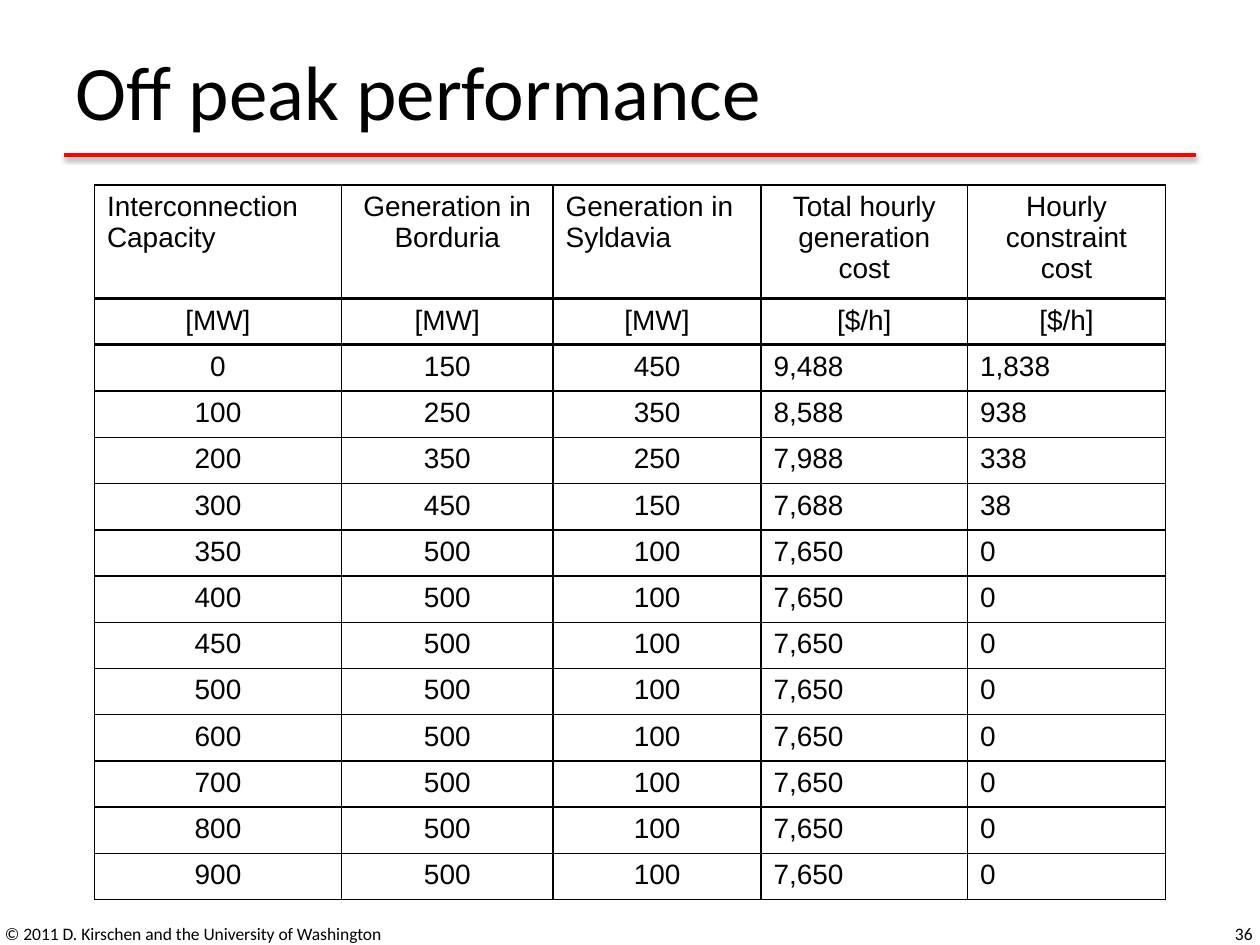
from dataclasses import dataclass

import pptx
import pptx.dml.color
import pptx.enum.shapes
import pptx.enum.text
import pptx.oxml
import pptx.oxml.ns
import pptx.slide
import pptx.table
import pptx.util
from pptx.util import Inches

ALIGN = pptx.enum.text.PP_ALIGN


@dataclass(frozen=True)
class Theme:
    ink: str = "000000"
    accent: str = "FF0000"
    heading_font: str = "Calibri"
    table_font: str = "Arial"
    title_size: float = 44
    footer_size: float = 10
    table_size: float = 16
    thin: float = 1
    thick: float = 2


@dataclass(frozen=True)
class Label:
    text: str
    left: float
    top: float
    width: float
    height: float
    size: float
    align: ALIGN = ALIGN.LEFT


@dataclass(frozen=True)
class Column:
    heading: str
    unit: str
    width: float
    heading_align: ALIGN
    value_align: ALIGN


THEME = Theme()

LABELS = [
    Label("Off peak performance", 0.5, 0.13, 9, 1.17, THEME.title_size),
    Label("© 2011 D. Kirschen and the University of Washington",
          -0.06, 7.21, 3.88, 0.4, THEME.footer_size),
    Label("36", 7.71, 7.21, 2.33, 0.4, THEME.footer_size, ALIGN.RIGHT),
]

COLUMNS = [
    Column("Interconnection Capacity", "[MW]", 1.96, ALIGN.LEFT, ALIGN.CENTER),
    Column("Generation in Borduria", "[MW]", 1.68, ALIGN.CENTER, ALIGN.CENTER),
    Column("Generation in Syldavia", "[MW]", 1.65, ALIGN.LEFT, ALIGN.CENTER),
    Column("Total hourly generation\ncost", "[$/h]", 1.64, ALIGN.CENTER, ALIGN.LEFT),
    Column("Hourly constraint cost", "[$/h]", 1.57, ALIGN.CENTER, ALIGN.LEFT),
]

CONSTRAINED = [
    (0, 150, 450, 9488, 1838),
    (100, 250, 350, 8588, 938),
    (200, 350, 250, 7988, 338),
    (300, 450, 150, 7688, 38),
]
UNCONSTRAINED = [
    (capacity, 500, 100, 7650, 0)
    for capacity in (350, 400, 450, 500, 600, 700, 800, 900)
]
RESULTS = CONSTRAINED + UNCONSTRAINED

HEADING_HEIGHT = 0.66
ROW_HEIGHT = 0.3
UNIT_ROW = 1


def style_paragraphs(frame: pptx.text.text.TextFrame, font_name: str,
                     size: float, align: ALIGN) -> None:
    for paragraph in frame.paragraphs:
        paragraph.alignment = align
        paragraph.font.name = font_name
        paragraph.font.size = pptx.util.Pt(size)
        paragraph.font.color.rgb = pptx.dml.color.RGBColor.from_string(THEME.ink)


def add_label(slide: pptx.slide.Slide, label: Label) -> None:
    box = slide.shapes.add_textbox(Inches(label.left), Inches(label.top),
                                   Inches(label.width), Inches(label.height))
    frame = box.text_frame
    frame.word_wrap = True
    frame.vertical_anchor = pptx.enum.text.MSO_ANCHOR.MIDDLE
    frame.text = label.text
    style_paragraphs(frame, THEME.heading_font, label.size, label.align)


def add_title_rule(slide: pptx.slide.Slide) -> None:
    rule = slide.shapes.add_connector(
        pptx.enum.shapes.MSO_CONNECTOR.STRAIGHT,
        Inches(0.51), Inches(1.23), Inches(9.49), Inches(1.23))
    rule.line.color.rgb = pptx.dml.color.RGBColor.from_string(THEME.accent)
    rule.line.width = pptx.util.Pt(THEME.thick)
    blur, distance = pptx.util.Pt(3.1), pptx.util.Pt(1.6)
    rule._element.spPr.append(pptx.oxml.parse_xml(
        f'<a:effectLst {pptx.oxml.ns.nsdecls("a")}>'
        f'<a:outerShdw blurRad="{blur}" dist="{distance}" dir="5400000" rotWithShape="0">'
        f'<a:srgbClr val="{THEME.ink}"><a:alpha val="38000"/></a:srgbClr>'
        '</a:outerShdw></a:effectLst>'))


def set_borders(cell: pptx.table._Cell, top: float, bottom: float) -> None:
    widths = {"lnL": THEME.thin, "lnR": THEME.thin, "lnT": top, "lnB": bottom}
    properties = cell._tc.get_or_add_tcPr()
    for side, width in widths.items():
        properties.append(pptx.oxml.parse_xml(
            f'<a:{side} {pptx.oxml.ns.nsdecls("a")} w="{pptx.util.Pt(width)}">'
            f'<a:solidFill><a:srgbClr val="{THEME.ink}"/></a:solidFill>'
            f'</a:{side}>'))


def fill_cell(cell: pptx.table._Cell, text: str, align: ALIGN, row: int) -> None:
    cell.text = text
    style_paragraphs(cell.text_frame, THEME.table_font, THEME.table_size, align)
    top = THEME.thick if row in (UNIT_ROW, UNIT_ROW + 1) else THEME.thin
    bottom = THEME.thick if row in (UNIT_ROW - 1, UNIT_ROW) else THEME.thin
    set_borders(cell, top, bottom)
    cell.fill.background()


def add_results_table(slide: pptx.slide.Slide) -> None:
    row_count = len(RESULTS) + 2
    height = HEADING_HEIGHT + ROW_HEIGHT * (row_count - 1)
    table = slide.shapes.add_table(
        row_count, len(COLUMNS), Inches(0.75), Inches(1.47),
        Inches(8.5), Inches(height)).table
    table.first_row = False
    table.horz_banding = False
    for row_index, row in enumerate(table.rows):
        row.height = Inches(ROW_HEIGHT if row_index else HEADING_HEIGHT)
    for index, column in enumerate(COLUMNS):
        table.columns[index].width = Inches(column.width)
        fill_cell(table.cell(0, index), column.heading, column.heading_align, 0)
        fill_cell(table.cell(UNIT_ROW, index), column.unit, ALIGN.CENTER, UNIT_ROW)
        for row, result in enumerate(RESULTS, start=UNIT_ROW + 1):
            fill_cell(table.cell(row, index), f"{result[index]:,}",
                      column.value_align, row)


def main() -> None:
    presentation = pptx.Presentation()
    presentation.slide_width = Inches(10)
    presentation.slide_height = Inches(7.5)
    slide = presentation.slides.add_slide(presentation.slide_layouts[6])
    add_title_rule(slide)
    for label in LABELS:
        add_label(slide, label)
    add_results_table(slide)
    presentation.save("out.pptx")


if __name__ == "__main__":
    main()
